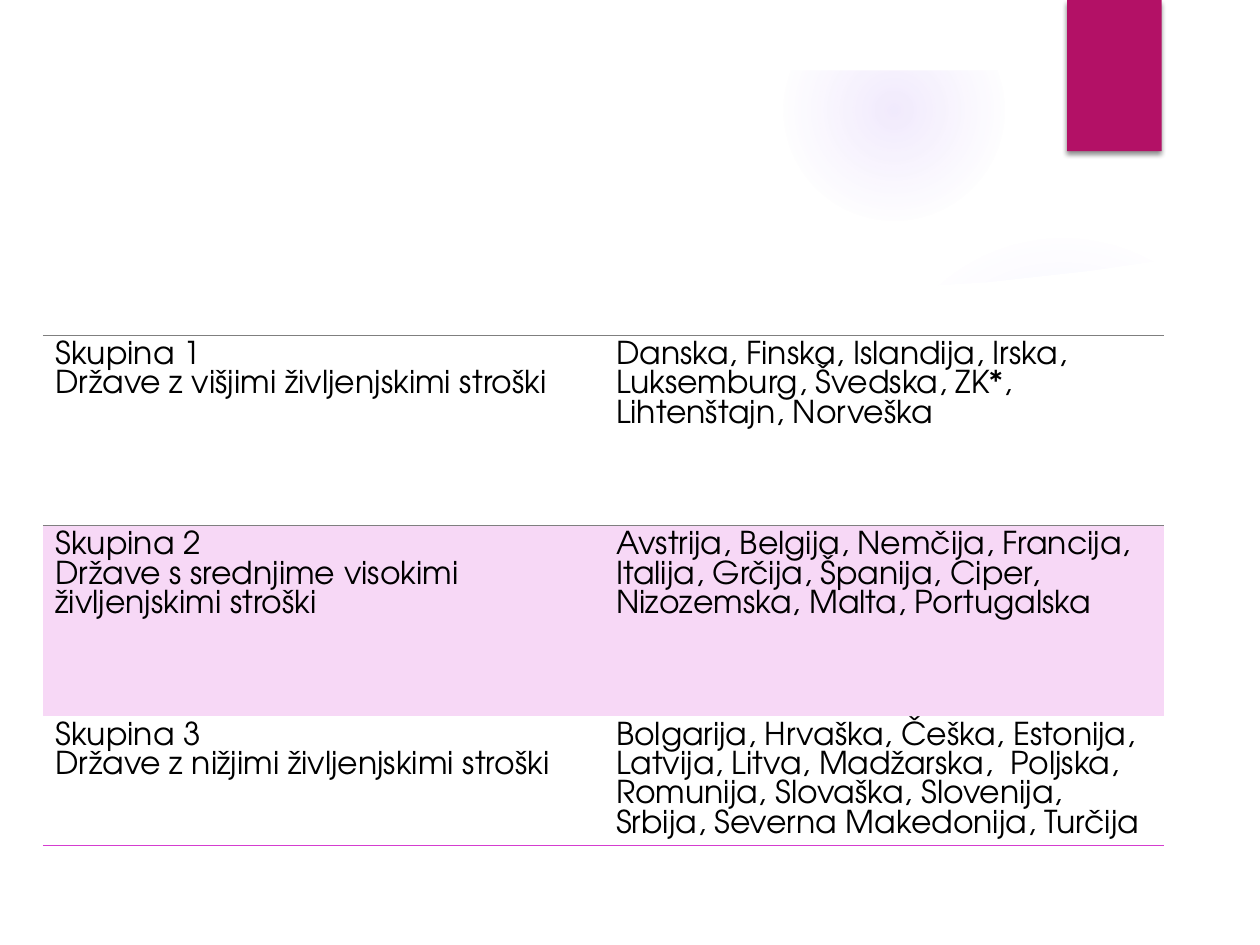
from lxml import etree
from pptx import Presentation
from pptx import util as u
from pptx.dml import color
from pptx.enum import shapes
from pptx.oxml import ns

FONT = "TeX Gyre Adventor"
COLORS = {
    "white": "FFFFFF",
    "black": "000000",
    "glow": "9B6BF2",
    "tab": "B31166",
    "band": "F7D8F6",
    "rule": "7F7F7F",
    "accent": "D53DD0",
}
GROUPS = [
    (["Skupina 1", "Države z višjimi življenjskimi stroški"],
     "Danska, Finska, Islandija, Irska, Luksemburg, Švedska, ZK*, "
     "Lihtenštajn, Norveška"),
    (["Skupina 2", "Države s srednjime visokimi življenjskimi stroški"],
     "Avstrija, Belgija, Nemčija, Francija, Italija, Grčija, Španija, Ciper, "
     "Nizozemska, Malta, Portugalska"),
    (["Skupina 3", "Države z nižjimi življenjskimi stroški"],
     "Bolgarija, Hrvaška, Češka, Estonija, Latvija, Litva, Madžarska,  Poljska, "
     "Romunija, Slovaška, Slovenija, Srbija, Severna Makedonija, Turčija"),
]
ROW_HEIGHTS = [1.51, 1.51, 1.03]
RULES = [("rule", 0.75), ("rule", 0.75), None, ("accent", 1)]
RIBBON = [(6.99, 2.34), (7.8, 2.32), (8.7, 2.21), (9.56, 2.08), (9.51, 1.74),
          (8.92, 1.92), (8.34, 2.06), (7.7, 2.19), (6.96, 2.29)]
PANEL = [(0.53, 2.03), (0.53, 6.99), (9.47, 6.99), (9.47, 2.03), (8.66, 2.15),
         (7.85, 2.24), (7.04, 2.29), (6.25, 2.33), (5.48, 2.34), (4.74, 2.34),
         (4.04, 2.33), (3.38, 2.3), (2.77, 2.26), (2.22, 2.22), (1.32, 2.13)]


def rgb(name):
    return color.RGBColor.from_string(COLORS[name])


def add_xml(parent, tag, **attributes):
    child = etree.SubElement(parent, ns.qn(tag))
    for key, value in attributes.items():
        child.set(key, str(value))
    return child


def add_color(parent, name, alpha):
    tint = add_xml(parent, "a:srgbClr", val=COLORS[name])
    add_xml(tint, "a:alpha", val=alpha * 1000)


def paint(shape, name):
    shape.shadow.inherit = False
    shape.line.fill.background()
    shape.fill.solid()
    shape.fill.fore_color.rgb = rgb(name)


def add_preset(page, kind, left, top, width, height, name):
    shape = page.shapes.add_shape(kind, u.Inches(left), u.Inches(top),
                                  u.Inches(width), u.Inches(height))
    paint(shape, name)
    return shape


def add_glow(page, left, top, size, stops):
    glow = add_preset(page, shapes.MSO_SHAPE.OVAL, left, top, size, size, "glow")
    solid = glow.element.spPr.find(ns.qn("a:solidFill"))
    gradient = etree.Element(ns.qn("a:gradFill"))
    stop_list = add_xml(gradient, "a:gsLst")
    for position, alpha in stops:
        stop = add_xml(stop_list, "a:gs", pos=position * 1000)
        add_color(stop, "glow", alpha)
    circle = add_xml(gradient, "a:path", path="circle")
    add_xml(circle, "a:fillToRect", l=50000, t=50000, r=50000, b=50000)
    solid.getparent().replace(solid, gradient)


def add_outline(page, points):
    start, *rest = [(u.Inches(x), u.Inches(y)) for x, y in points]
    builder = page.shapes.build_freeform(*start)
    builder.add_line_segments(rest, close=True)
    outline = builder.convert_to_shape()
    paint(outline, "white")
    return outline


def add_backdrop(page):
    add_glow(page, 6.89, 1.83, 3.08, [(0, 7), (36, 6), (69, 0)])
    add_glow(page, 6.22, 0, 1.75, [(0, 14), (36, 7), (73, 0)])
    ribbon = add_outline(page, RIBBON)
    tint = ribbon.element.spPr.find(ns.qn("a:solidFill"))[0]
    add_xml(tint, "a:alpha", val=20000)
    add_outline(page, PANEL)
    frame = add_preset(page, shapes.MSO_SHAPE.FRAME, 0, 0, 10, 7.5, "white")
    frame.adjustments[0] = 0.56 / 7.5


def add_corner_tab(page):
    tab = add_preset(page, shapes.MSO_SHAPE.RECTANGLE, 8.47, 0, 0.75, 1.2, "tab")
    effects = tab.element.spPr.find(ns.qn("a:effectLst"))
    shadow = add_xml(effects, "a:outerShdw", blurRad=u.Pt(3), dist=u.Pt(2),
                     dir=90 * 60000, rotWithShape=0)
    add_color(shadow, "black", 45)


def set_borders(cell, top, bottom):
    properties = cell._tc.get_or_add_tcPr()
    for side, rule in zip("LRTB", (None, None, top, bottom)):
        if rule:
            name, width = rule
            line = add_xml(properties, f"a:ln{side}", w=u.Pt(width))
            fill = add_xml(line, "a:solidFill")
            add_xml(fill, "a:srgbClr", val=COLORS[name])
        else:
            line = add_xml(properties, f"a:ln{side}", w=0)
            add_xml(line, "a:noFill")


def write_cell(cell, lines):
    frame = cell.text_frame
    for index, line in enumerate(lines):
        para = frame.add_paragraph() if index else frame.paragraphs[0]
        para.line_spacing = u.Pt(16.75)
        span = para.add_run()
        span.text = line
        span.font.name = FONT
        span.font.size = u.Pt(18)
        span.font.bold = False
        span.font.color.rgb = rgb("black")


def add_country_table(page):
    table = page.shapes.add_table(
        len(GROUPS), 2, u.Inches(0.34), u.Inches(2.66),
        u.Inches(8.9), u.Inches(sum(ROW_HEIGHTS))).table
    table.first_row = False
    table.horz_banding = False
    for row, (label, countries) in enumerate(GROUPS):
        table.rows[row].height = u.Inches(ROW_HEIGHTS[row])
        for column, lines in enumerate((label, [countries])):
            cell = table.cell(row, column)
            set_borders(cell, RULES[row], RULES[row + 1])
            if row == 1:
                cell.fill.solid()
                cell.fill.fore_color.rgb = rgb("band")
            else:
                cell.fill.background()
            write_cell(cell, lines)


def main():
    deck = Presentation()
    deck.slide_width = u.Inches(10)
    deck.slide_height = u.Inches(7.5)
    page = deck.slides.add_slide(deck.slide_layouts[6])
    add_backdrop(page)
    add_corner_tab(page)
    add_country_table(page)
    deck.save("out.pptx")


if __name__ == "__main__":
    main()
